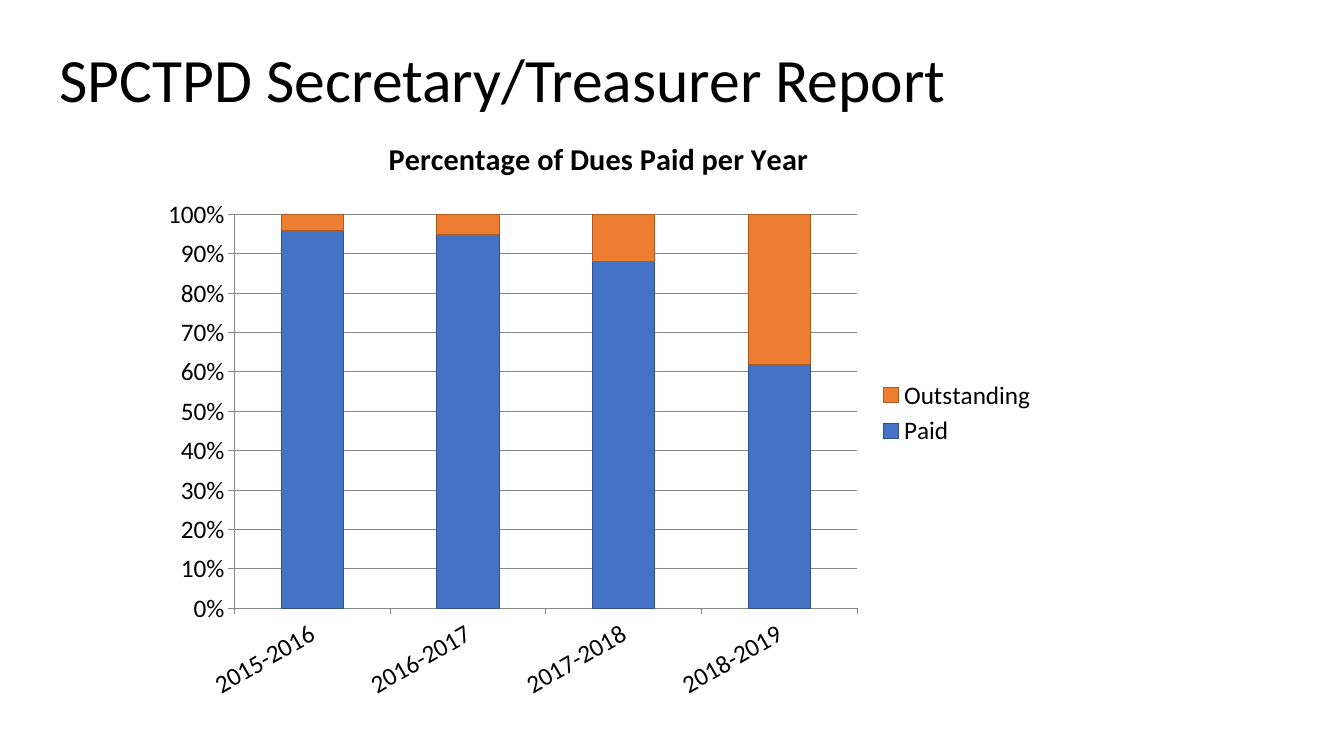
from dataclasses import dataclass

from pptx import Presentation
from pptx.chart.chart import Chart
from pptx.chart.data import CategoryChartData
from pptx.dml.color import RGBColor
from pptx.enum.chart import XL_CHART_TYPE as ChartType
from pptx.enum.chart import XL_LEGEND_POSITION as LegendPosition
from pptx.enum.chart import XL_TICK_MARK as TickMark
from pptx.enum.text import MSO_ANCHOR as Anchor
from pptx.oxml import parse_xml
from pptx.oxml.ns import nsdecls
from pptx.slide import Slide
from pptx.text.text import Font
from pptx.util import Inches, Pt

WIDTH, HEIGHT = Inches(13.33), Inches(7.5)
FONT = "Calibri"
COLORS = {
    "text": "000000",
    "grid": "878787",
    "paid": "4472C4",
    "paid_edge": "2F528F",
    "outstanding": "ED7D31",
    "outstanding_edge": "AE5A21",
}


@dataclass(frozen=True)
class Area:
    """Position and size as shares of the enclosing frame."""
    x: float
    y: float
    w: float
    h: float

    def on_slide(self) -> tuple[int, int, int, int]:
        return (int(self.x * WIDTH), int(self.y * HEIGHT),
                int(self.w * WIDTH), int(self.h * HEIGHT))


@dataclass(frozen=True)
class DuesSeries:
    name: str
    shares: tuple[int, ...]
    color: str


HEADING = Area(0.037, 0.013, 0.863, 0.193)
DUES = Area(0.112, 0.151, 0.667, 0.791)
PLOT = Area(0.0935, 0.1675, 0.695, 0.659)
YEARS = [f"{year}-{year + 1}" for year in range(2015, 2019)]
SERIES = (
    DuesSeries("Paid", (96, 95, 88, 62), "paid"),
    DuesSeries("Outstanding", (4, 5, 12, 38), "outstanding"),
)


def color(name: str) -> RGBColor:
    return RGBColor.from_string(COLORS[name])


def style_font(font: Font, size: float, bold: bool = False) -> None:
    font.name, font.size, font.bold = FONT, Pt(size), bold
    font.color.rgb = color("text")


def add_heading(slide: Slide, text: str) -> None:
    frame = slide.shapes.add_textbox(*HEADING.on_slide()).text_frame
    frame.word_wrap = True
    frame.vertical_anchor = Anchor.MIDDLE
    paragraph = frame.paragraphs[0]
    paragraph.line_spacing = 0.9
    run = paragraph.add_run()
    run.text = text
    style_font(run.font, 44)


def place_plot(chart: Chart, area: Area) -> None:
    plot_area = chart.element.xpath("c:chart/c:plotArea")[0]
    for layout in plot_area.xpath("c:layout"):
        plot_area.remove(layout)
    shares = "".join(f'<c:{key} val="{getattr(area, key)}"/>' for key in "xywh")
    plot_area.insert(0, parse_xml(
        f'<c:layout {nsdecls("c")}><c:manualLayout><c:layoutTarget val="inner"/>'
        f'<c:xMode val="edge"/><c:yMode val="edge"/>{shares}'
        '</c:manualLayout></c:layout>'))


def style_axes(chart: Chart) -> None:
    years, percent = chart.category_axis, chart.value_axis
    for axis in (years, percent):
        axis.major_tick_mark = TickMark.OUTSIDE
        axis.minor_tick_mark = TickMark.NONE
        axis.format.line.color.rgb = color("grid")
        axis.format.line.width = Pt(0.75)
        style_font(axis.tick_labels.font, 18)
    # Slanted year labels
    chart.element.xpath(".//c:catAx/c:txPr/a:bodyPr")[0].set("rot", str(-30 * 60000))

    percent.minimum_scale, percent.maximum_scale, percent.major_unit = 0, 1, 0.1
    percent.tick_labels.number_format = "0%"
    percent.tick_labels.number_format_is_linked = False
    percent.has_major_gridlines = True
    percent.major_gridlines.format.line.color.rgb = color("grid")
    percent.major_gridlines.format.line.width = Pt(0.75)


def add_dues_chart(slide: Slide) -> None:
    dues = CategoryChartData()
    dues.categories = YEARS
    for series in SERIES:
        dues.add_series(series.name, series.shares)
    chart = slide.shapes.add_chart(
        ChartType.COLUMN_STACKED_100, *DUES.on_slide(), dues).chart
    style_font(chart.font, 18)

    # Chart title
    chart.has_title = True
    run = chart.chart_title.text_frame.paragraphs[0].add_run()
    run.text = "Percentage of Dues Paid per Year"
    style_font(run.font, 21.6, bold=True)
    chart.chart_title.include_in_layout = False

    # Columns
    columns = chart.plots[0]
    columns.gap_width, columns.overlap = 150, 100
    columns.vary_by_categories = False
    for column, series in zip(columns.series, SERIES):
        column.format.fill.solid()
        column.format.fill.fore_color.rgb = color(series.color)
        column.format.line.color.rgb = color(f"{series.color}_edge")
        column.format.line.width = Pt(0.5)

    # Axes, legend and plot position
    style_axes(chart)
    chart.has_legend = True
    chart.legend.position = LegendPosition.RIGHT
    chart.legend.include_in_layout = False
    style_font(chart.legend.font, 18)
    place_plot(chart, PLOT)


def main() -> None:
    deck = Presentation()
    deck.slide_width, deck.slide_height = WIDTH, HEIGHT
    report = deck.slides.add_slide(deck.slide_layouts[6])
    add_heading(report, "SPCTPD Secretary/Treasurer Report")
    add_dues_chart(report)
    deck.save("out.pptx")


if __name__ == "__main__":
    main()
